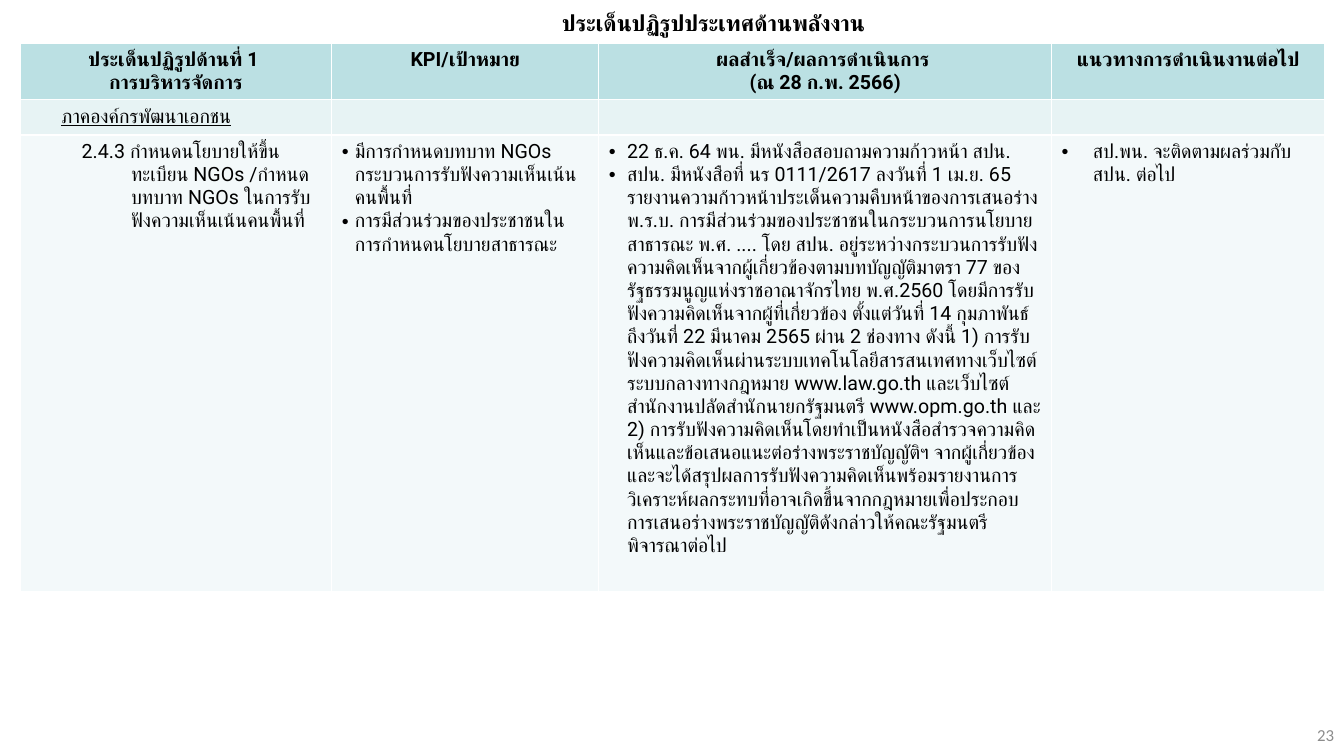
from dataclasses import dataclass

from pptx import Presentation
from pptx.dml.color import RGBColor
from pptx.enum.text import MSO_ANCHOR, MSO_AUTO_SIZE, PP_ALIGN
from pptx.oxml.ns import qn
from pptx.util import Inches, Pt
from lxml.etree import SubElement


@dataclass(frozen=True)
class Theme:
    font: str = "Roboto"
    number_font: str = "Calibri"
    ink: str = "000000"
    grey: str = "8C8C8C"
    header_fill: str = "BBE0E3"
    section_fill: str = "E7F3F4"
    body_fill: str = "F3F9FA"
    title_size: int = 16
    table_size: int = 14
    number_size: int = 12


T = Theme()

COLUMNS = [3.09, 2.65, 4.49, 2.71]
ROWS = [0.56, 0.35, 4.53]

HEADERS = [
    ["ประเด็นปฏิรูปด้านที่ 1 ", "การบริหารจัดการ"],
    ["KPI/เป้าหมาย"],
    ["ผลสำเร็จ/ผลการดำเนินการ ", "(ณ 28 ก.พ. 2566)"],
    ["แนวทางการดำเนินงานต่อไป"],
]
SECTION = "ภาคองค์กรพัฒนาเอกชน"
TOPIC = "2.4.3 กำหนดนโยบายให้ขึ้นทะเบียน NGOs /กำหนดบทบาท NGOs ในการรับฟังความเห็นเน้นคนพื้นที่"
TARGETS = [
    "มีการกำหนดบทบาท NGOs กระบวนการรับฟังความเห็นเน้นคนพื้นที่",
    "การมีส่วนร่วมของประชาชนในการกำหนดนโยบายสาธารณะ",
]
# The long progress report, in phrases joined by single spaces
PROGRESS = [
    "สปน. มีหนังสือที่ นร 0111/2617 ลงวันที่ 1 เม.ย. 65",
    "รายงานความก้าวหน้าประเด็นความคืบหน้าของการเสนอร่าง พ.ร.บ.",
    "การมีส่วนร่วมของประชาชนในกระบวนการนโยบายสาธารณะ พ.ศ. .... โดย สปน.",
    "อยู่ระหว่างกระบวนการรับฟังความคิดเห็นจากผู้เกี่ยวข้องตามบทบัญญัติมาตรา 77",
    "ของรัฐธรรมนูญแห่งราชอาณาจักรไทย พ.ศ.2560",
    "โดยมีการรับฟังความคิดเห็นจากผู้ที่เกี่ยวข้อง ตั้งแต่วันที่ 14 กุมภาพันธ์",
    "ถึงวันที่ 22 มีนาคม 2565 ผ่าน 2 ช่องทาง ดังนี้ 1)",
    "การรับฟังความคิดเห็นผ่านระบบเทคโนโลยีสารสนเทศทางเว็บไซต์ระบบกลางทางกฎหมาย",
    "www.law.go.th และเว็บไซต์สำนักงานปลัดสำนักนายกรัฐมนตรี www.opm.go.th",
    "และ 2) การรับฟังความคิดเห็นโดยทำเป็นหนังสือสำรวจความคิดเห็นและข้อเสนอแนะ"
    "ต่อร่างพระราชบัญญัติฯ จากผู้เกี่ยวข้อง",
    "และจะได้สรุปผลการรับฟังความคิดเห็นพร้อมรายงานการวิเคราะห์ผลกระทบ"
    "ที่อาจเกิดขึ้นจากกฎหมายเพื่อประกอบการเสนอร่างพระราชบัญญัติดังกล่าว"
    "ให้คณะรัฐมนตรีพิจารณาต่อไป",
]
RESULTS = ["22 ธ.ค. 64 พน. มีหนังสือสอบถามความก้าวหน้า สปน.", " ".join(PROGRESS)]
NEXT_STEPS = ["สป.พน. จะติดตามผลร่วมกับ สปน. ต่อไป"]


def format_paragraph(p, size, align=PP_ALIGN.LEFT, font=T.font, color=T.ink,
                     bold=False, underline=False):
    p.alignment = align
    for r in p.runs:
        f = r.font
        f.name, f.size, f.bold, f.underline = font, Pt(size), bold, underline
        f.color.rgb = RGBColor.from_string(color)
        # Thai text takes the complex-script font
        SubElement(f._element, qn("a:cs"), typeface=font)
    p._p.get_or_add_endParaRPr().set("sz", str(size * 100))


def indent(p, left, first, bullet):
    pPr = p._p.get_or_add_pPr()
    pPr.set("marL", str(Inches(left)))
    pPr.set("indent", str(Inches(first)))
    if bullet:
        SubElement(pPr, qn("a:buFont"), typeface="Arial")
        SubElement(pPr, qn("a:buChar"), char="•")


def fill_cell(cell, fill, lines=(), left=0, first=0, bullet=False, **style):
    cell.fill.solid()
    cell.fill.fore_color.rgb = RGBColor.from_string(fill)
    tf = cell.text_frame
    tf.text = "\n".join(lines)
    for p in tf.paragraphs:
        format_paragraph(p, T.table_size, **style)
        if left:
            indent(p, left, first, bullet)


def place_text(sp, box, text, **style):
    sp.left, sp.top, sp.width, sp.height = map(Inches, box)
    tf = sp.text_frame
    tf.text = text
    tf.word_wrap = True
    tf.auto_size = MSO_AUTO_SIZE.NONE
    tf.vertical_anchor = MSO_ANCHOR.MIDDLE
    format_paragraph(tf.paragraphs[0], **style)


def add_reform_table(slide):
    frame = slide.shapes.add_table(len(ROWS), len(COLUMNS), Inches(0.2), Inches(0.43),
                                   Inches(sum(COLUMNS)), Inches(sum(ROWS)))
    table = frame.table
    table.horz_banding = False
    for column, width in zip(table.columns, COLUMNS):
        column.width = Inches(width)
    for row, height in zip(table.rows, ROWS):
        row.height = Inches(height)

    # Header row
    for col, lines in enumerate(HEADERS):
        fill_cell(table.cell(0, col), T.header_fill, lines, align=PP_ALIGN.CENTER, bold=True)

    # Section row
    fill_cell(table.cell(1, 0), T.section_fill, [SECTION], 0.51, -0.2, underline=True)
    for col in range(1, len(COLUMNS)):
        fill_cell(table.cell(1, col), T.section_fill)

    # Body row: a numbered topic, then bulleted lists
    fill_cell(table.cell(2, 0), T.body_fill, [TOPIC], 1, -0.49)
    lists = [(TARGETS, 0.13), (RESULTS, 0.18), (NEXT_STEPS, 0.31)]
    for col, (items, hang) in enumerate(lists, start=1):
        fill_cell(table.cell(2, col), T.body_fill, items, hang, -hang, bullet=True)


def main():
    prs = Presentation()
    prs.slide_width, prs.slide_height = Inches(13.33), Inches(7.5)
    slide = prs.slides.add_slide(prs.slide_layouts[5])

    # Title
    place_text(slide.shapes.title, (3.59, 0.04, 6.97, 0.37), "ประเด็นปฏิรูปประเทศด้านพลังงาน",
               size=T.title_size, align=PP_ALIGN.CENTER, bold=True)

    add_reform_table(slide)

    # Page number
    number_box = (10.33, 7.09, 3, 0.4)
    place_text(slide.shapes.add_textbox(*map(Inches, number_box)), number_box, "23",
               size=T.number_size, align=PP_ALIGN.RIGHT, font=T.number_font, color=T.grey)

    prs.save("out.pptx")


if __name__ == "__main__":
    main()
